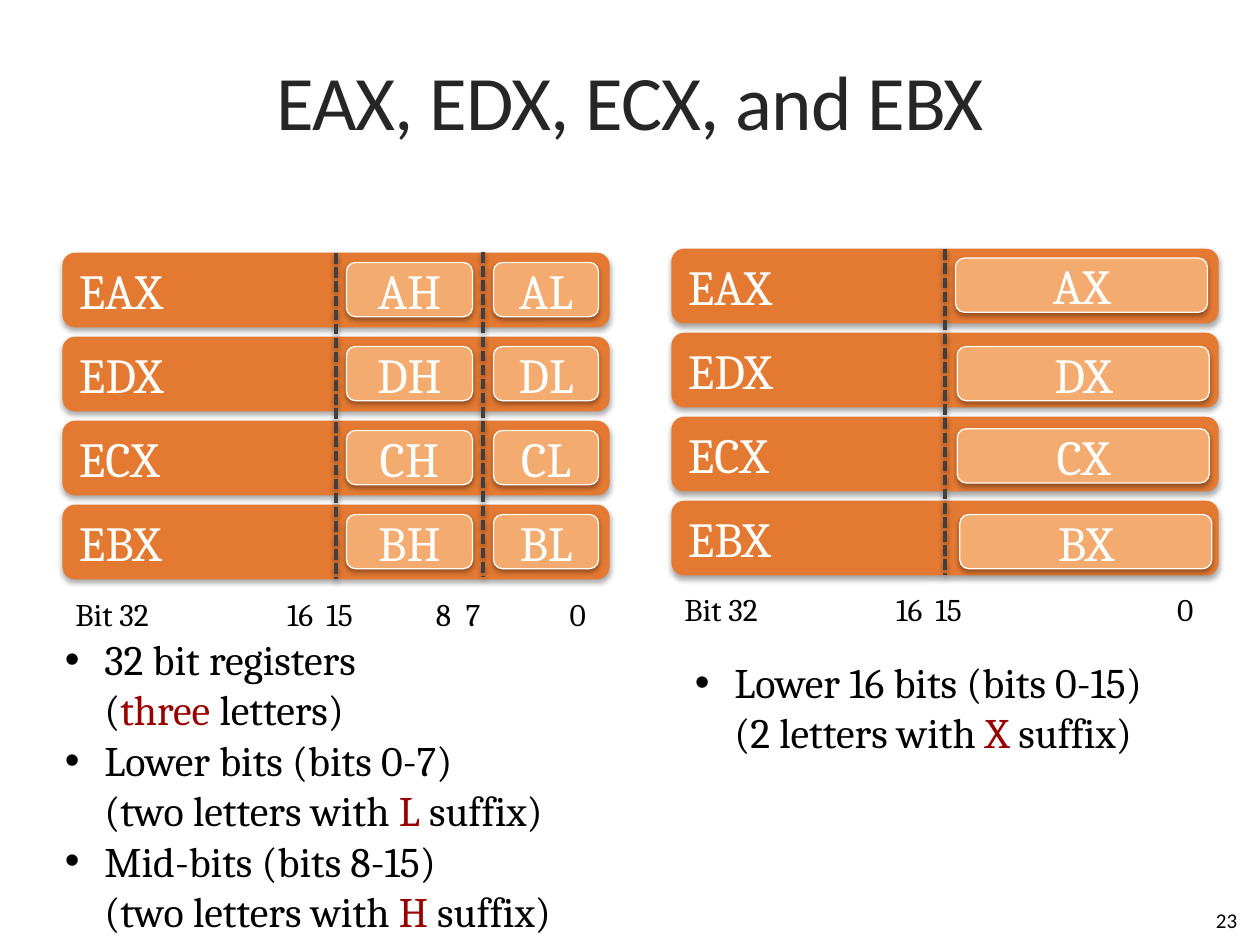
from lxml import etree
from pptx import Presentation
from pptx import util as u
from pptx.dml.color import RGBColor
from pptx.enum import dml, shapes, text
from pptx.oxml import ns

Pt = u.Pt
ORANGE = RGBColor(0xE4, 0x79, 0x32)
PEACH = RGBColor(0xF4, 0xAB, 0x70)
WHITE = RGBColor(0xFF, 0xFF, 0xFE)
GRAY = RGBColor(0x40, 0x40, 0x40)
TITLE_GRAY = RGBColor(0x26, 0x26, 0x26)
BLACK = RGBColor(0, 0, 0)
RED = RGBColor(0x99, 0, 0)
LEFT, CENTER, RIGHT = text.PP_ALIGN.LEFT, text.PP_ALIGN.CENTER, text.PP_ALIGN.RIGHT
ROW_PITCH = 48


def add_shadow(item, distance, opacity):
    effects = etree.SubElement(item._element.spPr, ns.qn("a:effectLst"))
    shadow = etree.SubElement(
        effects, ns.qn("a:outerShdw"), blurRad=str(Pt(3.1)), dist=str(Pt(distance)),
        dir="5400000", algn="ctr", rotWithShape="0")
    color = etree.SubElement(shadow, ns.qn("a:srgbClr"), val="000000")
    etree.SubElement(color, ns.qn("a:alpha"), val=str(opacity * 1000))


def add_box(place, words, size, color, align=LEFT, font="Cambria", fill=None, outline=None):
    area = [Pt(value) for value in place]
    if fill is None:
        box = page.shapes.add_textbox(*area)
    else:
        box = page.shapes.add_shape(shapes.MSO_SHAPE.ROUNDED_RECTANGLE, *area)
        box.fill.solid()
        box.fill.fore_color.rgb = fill
        box.line.color.rgb = outline
        box.line.width = Pt(0.75)
        add_shadow(box, 1.8, 35)
    box.text_frame.word_wrap = True
    box.text_frame.vertical_anchor = text.MSO_ANCHOR.MIDDLE
    para = box.text_frame.paragraphs[0]
    para.text = words
    para.alignment = align
    para.font.name, para.font.size, para.font.color.rgb = font, Pt(size), color
    return box


deck = Presentation()
deck.slide_width, deck.slide_height = Pt(720), Pt(540)
page = deck.slides.add_slide(deck.slide_layouts[6])

title = add_box((36, 12, 648, 90), "EAX, EDX, ECX, and EBX", 44, TITLE_GRAY, CENTER, "Calibri")
title.text_frame.margin_left = title.text_frame.margin_right = 0
title.text_frame.paragraphs[0].runs[0].font._element.set("spc", "-50")
add_box((546, 511, 168, 29), "23", 12, BLACK, RIGHT, "Calibri")

for left, top in ((36, 144.75), (384, 142.5)):
    for row, letter in enumerate("ADCB"):
        add_box((left, top + row * ROW_PITCH, 312, 42), f"E{letter}X", 28, WHITE,
                fill=ORANGE, outline=ORANGE)

for x, top, bottom in ((192, 144.75, 331), (276, 144, 330), (540, 142.5, 328.5)):
    divider = page.shapes.add_connector(
        shapes.MSO_CONNECTOR.STRAIGHT, Pt(x), Pt(top), Pt(x), Pt(bottom))
    divider.line.color.rgb = GRAY
    divider.line.width = Pt(2)
    divider.line.dash_style = dml.MSO_LINE.SQUARE_DOT
    add_shadow(divider, 1.6, 38)

for row, letter in enumerate("ADCB"):
    for half, left, width in (("H", 198, 72), ("L", 282, 60)):
        add_box((left, 150 + row * ROW_PITCH, width, 31), letter + half, 28, WHITE, CENTER,
                fill=PEACH, outline=WHITE)

for letter, left, top in (("A", 546, 147.5), ("D", 547, 198), ("C", 547, 245), ("B", 548.5, 294)):
    add_box((left, top, 144, 31), letter + "X", 28, WHITE, CENTER, fill=PEACH, outline=WHITE)

bit_scales = (
    (36, 336.5, {"16": 121, "15": 143.5, "8": 206, "7": 223, "0": 282.5}),
    (384, 333.5, {"16": 121, "15": 143.5, "0": 281.5}),
)
for left, top, stops in bit_scales:
    scale = add_box((left, top, 324, 29), "\t".join(["Bit 32", *stops]), 18, BLACK)
    scale.text_frame.vertical_anchor = text.MSO_ANCHOR.TOP
    props = scale.text_frame.paragraphs[0]._p.get_or_add_pPr()
    tabs = etree.Element(ns.qn("a:tabLst"))
    for stop in stops.values():
        etree.SubElement(tabs, ns.qn("a:tab"), pos=str(Pt(stop)), algn="l")
    props.insert(0, tabs)

notes = (
    ((30, 358.5, 336, 181.5), (
        ("32 bit registers", "(", "three", " letters)"),
        ("Lower bits (bits 0-7)", "(two letters with ", "L", " suffix)"),
        ("Mid-bits (bits 8-15)", "(two letters with ", "H", " suffix)"))),
    ((390, 371.5, 312, 65.5), (
        ("Lower 16 bits (bits 0-15)", "(2 letters with ", "X", " suffix)"),)),
)
for place, items in notes:
    box = add_box(place, "", 24, BLACK)
    frame = box.text_frame
    frame.vertical_anchor = text.MSO_ANCHOR.TOP
    for index, (heading, before, key, after) in enumerate(items):
        para = frame.add_paragraph() if index else frame.paragraphs[0]
        para.font.name, para.font.size, para.font.color.rgb = "Cambria", Pt(24), BLACK
        props = para._p.get_or_add_pPr()
        props.set("marL", str(Pt(22.5)))
        props.set("indent", str(Pt(-22.5)))
        bullet_font = etree.Element(ns.qn("a:buFont"), typeface="Arial")
        bullet = etree.Element(ns.qn("a:buChar"), char="•")
        props.insert(0, bullet_font)
        props.insert(1, bullet)
        para.add_run().text = heading
        para.add_line_break()
        for words in (before, key, after):
            span = para.add_run()
            span.text = words
            if words == key:
                span.font.color.rgb = RED

deck.save("out.pptx")
